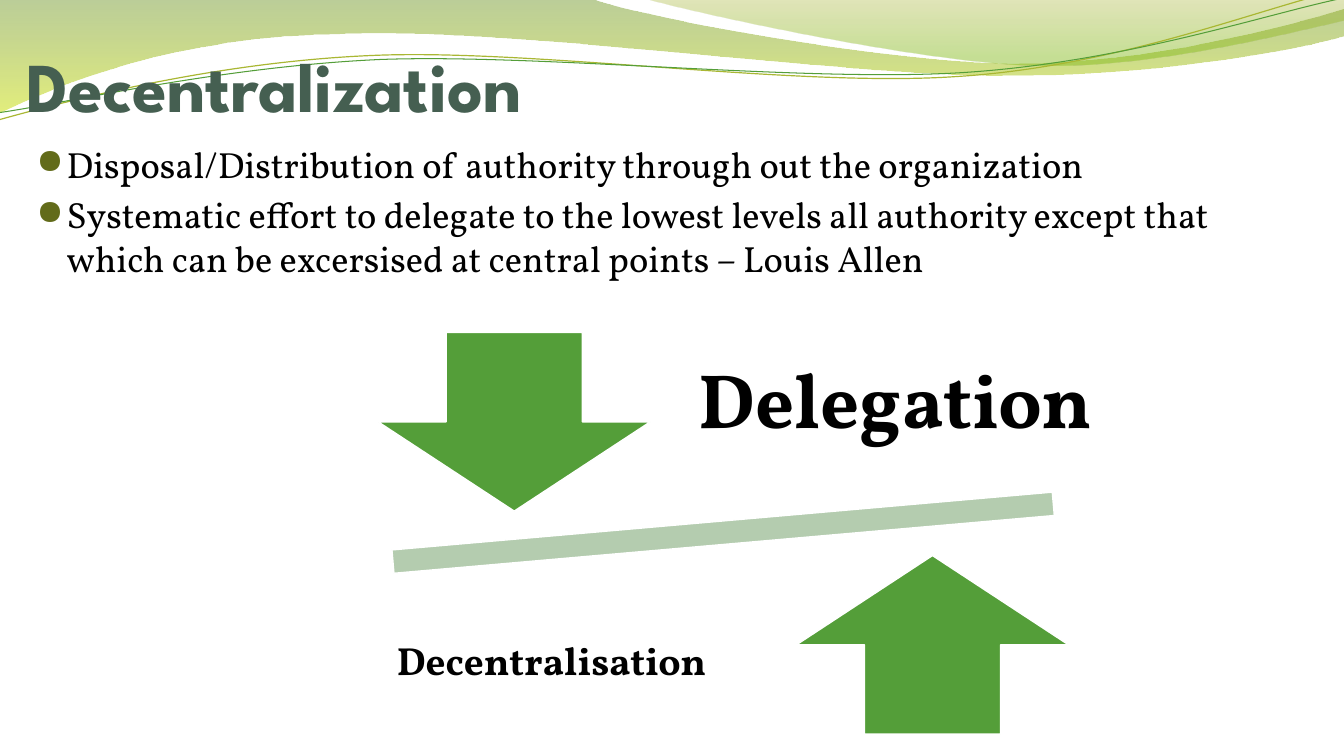
from dataclasses import dataclass

from lxml.etree import SubElement
from pptx import Presentation
from pptx.dml.color import RGBColor
from pptx.enum.shapes import MSO_SHAPE
from pptx.enum.text import MSO_ANCHOR, PP_ALIGN
from pptx.oxml.ns import qn
from pptx.shapes.autoshape import Shape
from pptx.slide import Slide
from pptx.text.text import TextFrame, _Paragraph
from pptx.util import Cm, Pt

COLORS = {
    "title": "455F51", "text": "000000", "bullet": "626B1A", "white": "FFFFFF",
    "arrow": "549E39", "bar": "B4CCAF", "olive_line": "A9B733",
    "moss": "69921C", "lime": "CCE10F", "olive": "9BAA1A", "leaf": "81BA16",
}
HEADING_FONT = "League Spartan"
BODY_FONT = "Vollkorn"
BULLET_FONT = "OpenSymbol"

Point = tuple[float, float]
Box = tuple[float, float, float, float]


@dataclass
class Outline:
    """Points in cm; a segment holds one point (line) or three (Bezier curve)."""
    start: Point
    segments: list[tuple[Point, ...]]


@dataclass
class GradientStop:
    position: float
    color: str
    opacity: int


@dataclass
class Band:
    outline: Outline
    stops: tuple[GradientStop, GradientStop]


@dataclass
class Strand:
    outline: Outline
    color: str
    width: float


@dataclass
class Symbol:
    kind: MSO_SHAPE
    box: Box
    color: str
    rotation: float = 0


@dataclass
class Label:
    text: str
    box: Box
    size: float
    inset: float


BANDS = [
    Band(Outline((0, 0), [
        ((14.91, -0.03),),
        ((16.1, 0.43), (22.45, 1.6), (25.68, 1.6)),
        ((28.88, 1.6), (32.44, 0.66), (33.86, 0.23)),
        ((33.88, 0.91),),
        ((33.3, 1.12), (29.44, 1.93), (25.25, 1.91)),
        ((21.06, 1.91), (12.93, 0.71), (8.71, 0.86)),
        ((4.37, 0.91), (1.55, 2.11), (-0.05, 2.87)),
        ((0, 0),),
    ]), (GradientStop(0, "moss", 45), GradientStop(1, "lime", 55))),
    Band(Outline((16.21, -0.03), [
        ((17.25, 0.28), (23.09, 1.57), (26.04, 1.65)),
        ((28.96, 1.75), (32.56, 0.81), (33.86, 0.53)),
        ((33.86, 0),),
        ((16.21, -0.03),),
    ]), (GradientStop(0, "olive", 30), GradientStop(0.8, "leaf", 45))),
]
STRANDS = [
    Strand(Outline((-0.03, 3.02), [
        ((1.6, 2.57), (5.33, 1.57), (9.37, 1.4)),
        ((13.39, 1.22), (20.04, 2.21), (24.1, 1.93)),
        ((28.19, 1.68), (31.78, 0.2), (33.78, -0.25)),
    ]), "olive_line", 0.85),
    Strand(Outline((-0.03, 2.84), [
        ((1.57, 2.62), (5.54, 1.68), (9.58, 1.5)),
        ((13.64, 1.35), (20.22, 2.08), (24.26, 1.83)),
        ((28.35, 1.57), (31.88, 0.36), (33.86, -0.05)),
    ]), "arrow", 0.75),
]
SYMBOLS = [
    Symbol(MSO_SHAPE.MATH_MINUS, (6.86, 12.17, 22.73, 2.51), "bar", 355),
    Symbol(MSO_SHAPE.DOWN_ARROW, (9.53, 8.38, 6.86, 4.5), "arrow"),
    Symbol(MSO_SHAPE.UP_ARROW, (20.07, 14, 6.86, 4.5), "arrow"),
]
LABELS = [
    Label("Delegation", (16.41, 7.82, 12.32, 4.72), 55, 1.09),
    Label("Decentralisation", (6.99, 14.33, 13.82, 4.72), 28, 0.56),
]
BULLETS = [
    "Disposal/Distribution of authority through out the organization",
    "Systematic effort to delegate to the lowest levels all authority except "
    "that which can be excersised at central points – Louis Allen",
]


def rgb(name: str) -> RGBColor:
    return RGBColor.from_string(COLORS[name])


def add_outline(slide: Slide, outline: Outline, close: bool) -> Shape:
    """Lay the points as a polygon, then merge each triple into one curve."""
    builder = slide.shapes.build_freeform(*map(Cm, outline.start))
    points = [(Cm(x), Cm(y)) for segment in outline.segments for x, y in segment]
    builder.add_line_segments(points, close=close)
    shape = builder.convert_to_shape()
    shape.shadow.inherit = False
    lines = iter(list(shape.element.spPr.iter(qn("a:lnTo"))))
    for segment in outline.segments:
        steps = [next(lines) for _ in segment]
        if len(steps) == 3:
            curve = SubElement(steps[0].getparent(), qn("a:cubicBezTo"))
            steps[0].addprevious(curve)
            for step in steps:
                curve.append(step[0])
                step.getparent().remove(step)
    return shape


def add_band(slide: Slide, band: Band) -> None:
    shape = add_outline(slide, band.outline, close=True)
    shape.line.fill.background()
    shape.fill.gradient()
    shape.fill.gradient_angle = 270
    for target, stop in zip(shape.fill.gradient_stops, band.stops):
        target.position = stop.position
        target.color.rgb = rgb(stop.color)
    colors = shape.element.spPr.iter(qn("a:srgbClr"))
    for color, stop in zip(colors, band.stops):
        SubElement(color, qn("a:alpha"), val=str(stop.opacity * 1000))


def add_strand(slide: Slide, strand: Strand) -> None:
    shape = add_outline(slide, strand.outline, close=False)
    shape.fill.background()
    shape.line.color.rgb = rgb(strand.color)
    shape.line.width = Pt(strand.width)


def add_symbol(slide: Slide, symbol: Symbol) -> None:
    shape = slide.shapes.add_shape(symbol.kind, *map(Cm, symbol.box))
    shape.rotation = symbol.rotation
    shape.shadow.inherit = False
    shape.fill.solid()
    shape.fill.fore_color.rgb = rgb(symbol.color)
    shape.line.color.rgb = rgb("white")
    shape.line.width = Pt(1)


def add_text_frame(slide: Slide, box: Box, anchor: MSO_ANCHOR,
                   insets: Point = (0.25, 0.13)) -> TextFrame:
    frame = slide.shapes.add_textbox(*map(Cm, box)).text_frame
    frame.word_wrap = True
    frame.vertical_anchor = anchor
    frame.margin_left = frame.margin_right = Cm(insets[0])
    frame.margin_top = frame.margin_bottom = Cm(insets[1])
    return frame


def add_run(paragraph: _Paragraph, text: str, size: float, color: str = "text",
            font: str = BODY_FONT, bold: bool = False) -> None:
    run = paragraph.add_run()
    run.text = text
    run.font.size = Pt(size)
    run.font.name = font
    run.font.bold = bold
    run.font.color.rgb = rgb(color)


def add_label(slide: Slide, label: Label) -> None:
    frame = add_text_frame(slide, label.box, MSO_ANCHOR.MIDDLE, (label.inset, label.inset))
    paragraph = frame.paragraphs[0]
    paragraph.alignment = PP_ALIGN.CENTER
    paragraph.line_spacing = 0.9
    add_run(paragraph, label.text, label.size, bold=True)


def set_bullet(paragraph: _Paragraph) -> None:
    properties = paragraph._p.get_or_add_pPr()
    properties.set("marL", str(Cm(0.76)))
    properties.set("indent", str(Cm(-0.76)))
    color = SubElement(properties, qn("a:buClr"))
    SubElement(color, qn("a:srgbClr"), val=COLORS["bullet"])
    SubElement(properties, qn("a:buSzPct"), val="95000")
    SubElement(properties, qn("a:buFont"), typeface=BULLET_FONT)
    SubElement(properties, qn("a:buChar"), char="●")


def main() -> None:
    presentation = Presentation()
    presentation.slide_width, presentation.slide_height = Cm(33.87), Cm(19.05)
    slide = presentation.slides.add_slide(presentation.slide_layouts[6])
    for band in BANDS:
        add_band(slide, band)
    for strand in STRANDS:
        add_strand(slide, strand)
    title = add_text_frame(slide, (0.66, 0, 30.48, 3.18), MSO_ANCHOR.BOTTOM, (0, 0))
    add_run(title.paragraphs[0], "Decentralization", 50, "title", HEADING_FONT, True)
    body = add_text_frame(slide, (0.67, 3.44, 30.48, 12.19), MSO_ANCHOR.TOP)
    for index, text in enumerate(BULLETS):
        paragraph = body.add_paragraph() if index else body.paragraphs[0]
        paragraph.space_before = Pt(5.2)
        set_bullet(paragraph)
        add_run(paragraph, text, 26)
    for symbol in SYMBOLS:
        add_symbol(slide, symbol)
    for label in LABELS:
        add_label(slide, label)
    presentation.save("out.pptx")


if __name__ == "__main__":
    main()
